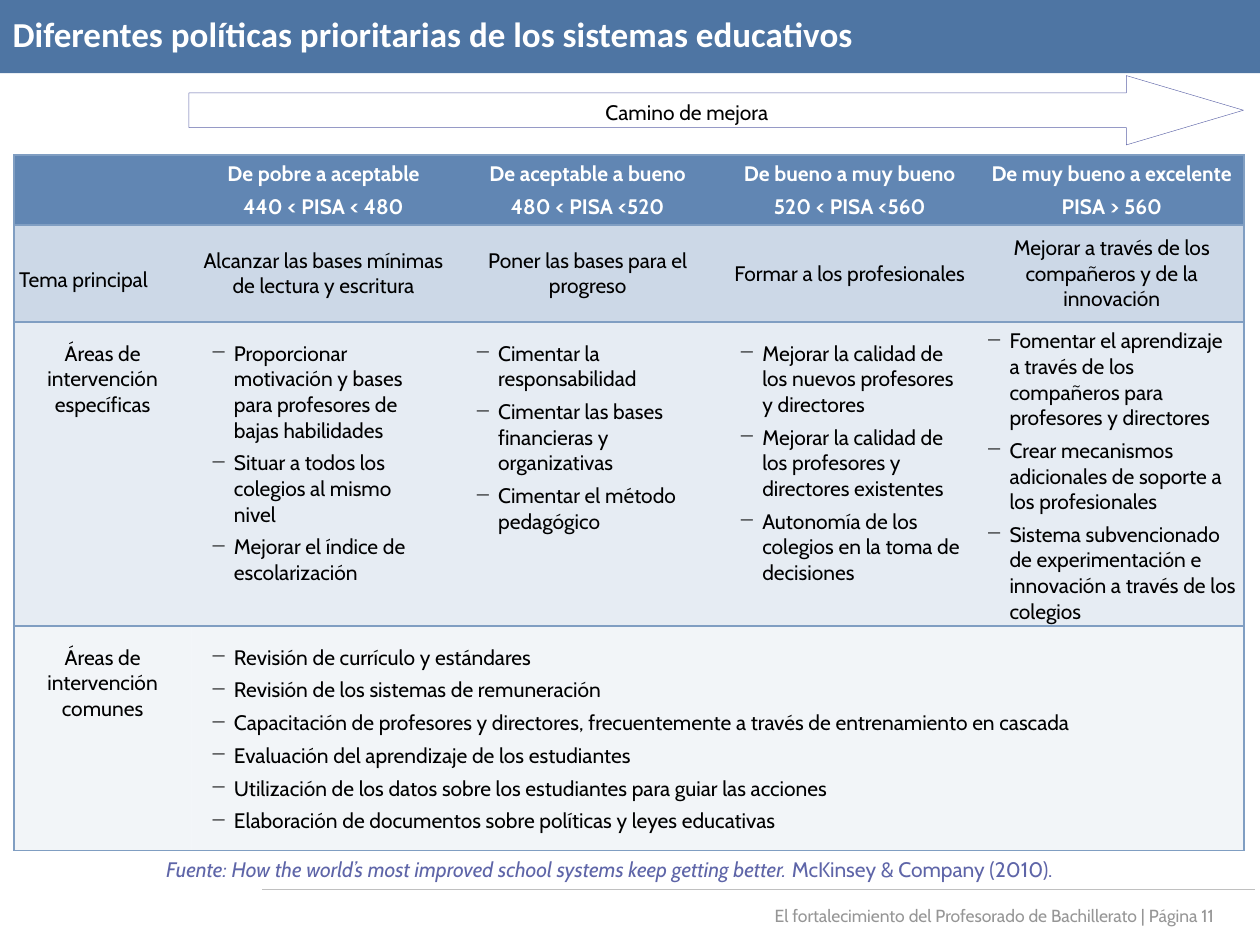
import pptx
import pptx.util
import pptx.dml.color
import pptx.enum.shapes
import pptx.enum.text
import pptx.oxml
import pptx.oxml.ns
from lxml import etree

Pt = pptx.util.Pt
RGBColor = pptx.dml.color.RGBColor
ALIGN = pptx.enum.text.PP_ALIGN
ANCHOR = pptx.enum.text.MSO_ANCHOR
qn = pptx.oxml.ns.qn

WHITE = RGBColor(0xFF, 0xFF, 0xFF)
BLACK = RGBColor(0, 0, 0)
TITLE_BLUE = RGBColor(0x4E, 0x75, 0xA3)
HEADER_BLUE = RGBColor(0x61, 0x86, 0xB3)
BORDER_BLUE = RGBColor(0x80, 0x9E, 0xC2)
THEME_BLUE = RGBColor(0xCC, 0xD8, 0xE7)
PALE_BLUE = RGBColor(0xE6, 0xEC, 0xF3)
VIOLET = RGBColor(0x5E, 0x65, 0xA8)
RULE_GREY = RGBColor(0xC0, 0xC0, 0xC0)
TEXT_GREY = RGBColor(0x96, 0x96, 0x96)

NO_GRID_STYLE = "{2D5ABB26-0587-4C30-8999-92F81FD0307C}"
COLUMN_WIDTHS = [101.5, 151, 151, 148.5, 151]
ROW_HEIGHTS = [40, 55.5, 170.5, 126]

HEADERS = [
    ["De pobre a aceptable", "440 < PISA < 480"],
    ["De aceptable a bueno", "480 < PISA <520"],
    ["De bueno a muy bueno", "520 < PISA <560"],
    ["De muy bueno a excelente", "PISA > 560"],
]
THEMES = [
    "Alcanzar las bases mínimas de lectura y escritura",
    "Poner las bases para el progreso",
    "Formar a los profesionales",
    "Mejorar a través de los compañeros y de la innovación",
]
SPECIFIC_AREAS = [
    ["Proporcionar motivación y bases para profesores de bajas habilidades",
     "Situar a todos los colegios al mismo nivel",
     "Mejorar el índice de escolarización"],
    ["Cimentar la responsabilidad",
     "Cimentar las bases financieras y organizativas",
     "Cimentar el método pedagógico"],
    ["Mejorar la calidad de los nuevos profesores y directores",
     "Mejorar la calidad de los profesores y directores existentes",
     "Autonomía de los colegios en la toma de decisiones"],
    ["Fomentar el aprendizaje a través de los compañeros para profesores y directores",
     "Crear mecanismos adicionales de soporte a los profesionales",
     "Sistema subvencionado de experimentación e innovación a través de los colegios"],
]
COMMON_AREAS = [
    "Revisión de currículo y estándares",
    "Revisión de los sistemas de remuneración",
    "Capacitación de profesores y directores, frecuentemente a través de entrenamiento en cascada",
    "Evaluación del aprendizaje de los estudiantes",
    "Utilización de los datos sobre los estudiantes para guiar las acciones",
    "Elaboración de documentos sobre políticas y leyes educativas",
]


def format_font(font, color, size=12, name="Cabin", bold=False, italic=False):
    font.name, font.size = name, Pt(size)
    font.bold, font.italic = bold, italic
    font.color.rgb = color


def set_margins(target, horizontal, vertical):
    target.margin_left = target.margin_right = Pt(horizontal)
    target.margin_top = target.margin_bottom = Pt(vertical)


def add_dash_bullet(paragraph):
    properties = paragraph._p.get_or_add_pPr()
    properties.set("marL", str(Pt(13.5)))
    properties.set("indent", str(-Pt(13.5)))
    etree.SubElement(properties, qn("a:buChar")).set("char", "−")


def add_borders(cell, sides):
    """Draw the given sides, in the order L, R, T, B."""
    properties = cell._tc.get_or_add_tcPr()
    for side in sides:
        line = etree.SubElement(properties, qn(f"a:ln{side}"), w=str(Pt(1)))
        fill = etree.SubElement(line, qn("a:solidFill"))
        etree.SubElement(fill, qn("a:srgbClr"), val=str(BORDER_BLUE))


def fill_cell(cell, texts, color=BLACK, bold=False, bullets=False, centered=True,
              anchor=ANCHOR.TOP, margins=(10.8, 10.8)):
    cell.vertical_anchor = anchor
    set_margins(cell, *margins)
    cell.text_frame.text = "\n".join(texts)
    for index, paragraph in enumerate(cell.text_frame.paragraphs):
        paragraph.alignment = ALIGN.CENTER if centered else ALIGN.LEFT
        paragraph.space_before = Pt(2 if index else 0)
        paragraph.space_after = Pt(2)
        if bullets:
            add_dash_bullet(paragraph)
        for run in paragraph.runs:
            format_font(run.font, color, bold=bold)


def add_title(slide, left, top, width, height):
    title = slide.shapes.title
    title.left, title.top, title.width, title.height = map(Pt, (left, top, width, height))
    title.fill.solid()
    title.fill.fore_color.rgb = TITLE_BLUE
    frame = title.text_frame
    frame.text = "Diferentes políticas prioritarias de los sistemas educativos"
    frame.auto_size = pptx.enum.text.MSO_AUTO_SIZE.NONE
    frame.vertical_anchor = ANCHOR.MIDDLE
    paragraph = frame.paragraphs[0]
    paragraph.alignment = ALIGN.LEFT
    paragraph.line_spacing = 0.9
    format_font(paragraph.runs[0].font, WHITE, size=20, name="Calibri", bold=True)


def add_improvement_arrow(slide, left, top, width, height):
    arrow = slide.shapes.add_shape(pptx.enum.shapes.MSO_SHAPE.RIGHT_ARROW,
                                   *map(Pt, (left, top, width, height)))
    arrow.shadow.inherit = False
    arrow.adjustments[0], arrow.adjustments[1] = 0.5, 1.69
    arrow.fill.background()
    arrow.line.color.rgb = VIOLET
    arrow.line.width = Pt(0.25)
    arrow.text_frame.text = "Camino de mejora"
    arrow.text_frame.vertical_anchor = ANCHOR.TOP
    paragraph = arrow.text_frame.paragraphs[0]
    paragraph.alignment = ALIGN.CENTER
    format_font(paragraph.runs[0].font, BLACK)


def add_policy_table(slide, left, top):
    frame = slide.shapes.add_table(
        len(ROW_HEIGHTS), len(COLUMN_WIDTHS),
        *map(Pt, (left, top, sum(COLUMN_WIDTHS), sum(ROW_HEIGHTS))))
    table = frame.table
    table.first_row = table.horz_banding = False
    table._tbl.tblPr.find(qn("a:tableStyleId")).text = NO_GRID_STYLE
    for column, width in zip(table.columns, COLUMN_WIDTHS):
        column.width = Pt(width)
    for row, height in zip(table.rows, ROW_HEIGHTS):
        row.height = Pt(height)
    table.cell(3, 1).merge(table.cell(3, 4))

    last = len(COLUMN_WIDTHS) - 1
    for row, color in zip(table.rows, (HEADER_BLUE, THEME_BLUE, PALE_BLUE, PALE_BLUE)):
        for index, cell in enumerate(row.cells):
            at_right = index == last or cell.is_merge_origin
            add_borders(cell, ("L" if index == 0 else "") + ("R" if at_right else "") + "TB")
            cell.fill.solid()
            cell.fill.fore_color.rgb = color
    for cell in table.rows[3].cells:
        color_element = cell._tc.tcPr.find(qn("a:solidFill"))[0]
        etree.SubElement(color_element, qn("a:alpha"), val="50000")

    fill_cell(table.cell(1, 0), ["Tema principal"], centered=False,
              anchor=ANCHOR.MIDDLE, margins=(3, 0))
    table.cell(1, 0).text_frame.paragraphs[0].line_spacing = 1.5
    fill_cell(table.cell(2, 0), ["Áreas de intervención específicas"])
    fill_cell(table.cell(3, 0), ["Áreas de intervención comunes"])
    columns = zip(HEADERS, THEMES, SPECIFIC_AREAS)
    for index, (header, theme, areas) in enumerate(columns, start=1):
        fill_cell(table.cell(0, index), header, color=WHITE, bold=True,
                  anchor=ANCHOR.MIDDLE, margins=(3.6, 3.6))
        fill_cell(table.cell(1, index), [theme], anchor=ANCHOR.MIDDLE, margins=(3, 0))
        fill_cell(table.cell(2, index), areas, bullets=True, centered=False,
                  margins=(3.6, 3.6) if index == last else (10.8, 10.8))
    fill_cell(table.cell(3, 1), COMMON_AREAS, bullets=True, centered=False)


def add_source_note(slide, left, top, width, height):
    box = slide.shapes.add_textbox(*map(Pt, (left, top, width, height)))
    box.text_frame.word_wrap = True
    paragraph = box.text_frame.paragraphs[0]
    paragraph.alignment = ALIGN.JUSTIFY
    parts = [
        ("Fuente: How the world’s most improved school systems keep getting better. ", True),
        ("McKinsey & Company (2010).", False),
    ]
    for text, italic in parts:
        run = paragraph.add_run()
        run.text = text
        format_font(run.font, VIOLET, italic=italic)


def add_footer(slide, left, top, width, height):
    """Rule along the top of the box, page line at its bottom right."""
    rule = slide.shapes.add_connector(pptx.enum.shapes.MSO_CONNECTOR.STRAIGHT,
                                      *map(Pt, (left, top, left + width, top)))
    rule.line.color.rgb = RULE_GREY
    rule.line.width = Pt(0.75)
    etree.SubElement(rule._element.spPr, qn("a:effectLst"))
    box = slide.shapes.add_textbox(
        *map(Pt, (left - 16.5, top + height - 12, width, 12)))
    frame = box.text_frame
    frame.word_wrap = True
    frame.vertical_anchor = ANCHOR.MIDDLE
    set_margins(frame, 7.2, 0)
    frame.text = "El fortalecimiento del Profesorado de Bachillerato | Página 11"
    frame.paragraphs[0].alignment = ALIGN.RIGHT
    format_font(frame.paragraphs[0].runs[0].font, TEXT_GREY, size=10)


def main():
    presentation = pptx.Presentation()
    presentation.slide_width, presentation.slide_height = Pt(720), Pt(540)
    slide = presentation.slides.add_slide(presentation.slide_layouts[5])
    add_footer(slide, 150, 508.3, 567, 20.7)
    add_title(slide, 0, 0, 720, 41.8)
    add_source_note(slide, 87.8, 486, 544.5, 21.6)
    add_policy_table(slide, 7.9, 88.5)
    add_improvement_arrow(slide, 108, 43.2, 602.6, 39.6)
    presentation.save("out.pptx")


if __name__ == "__main__":
    main()
